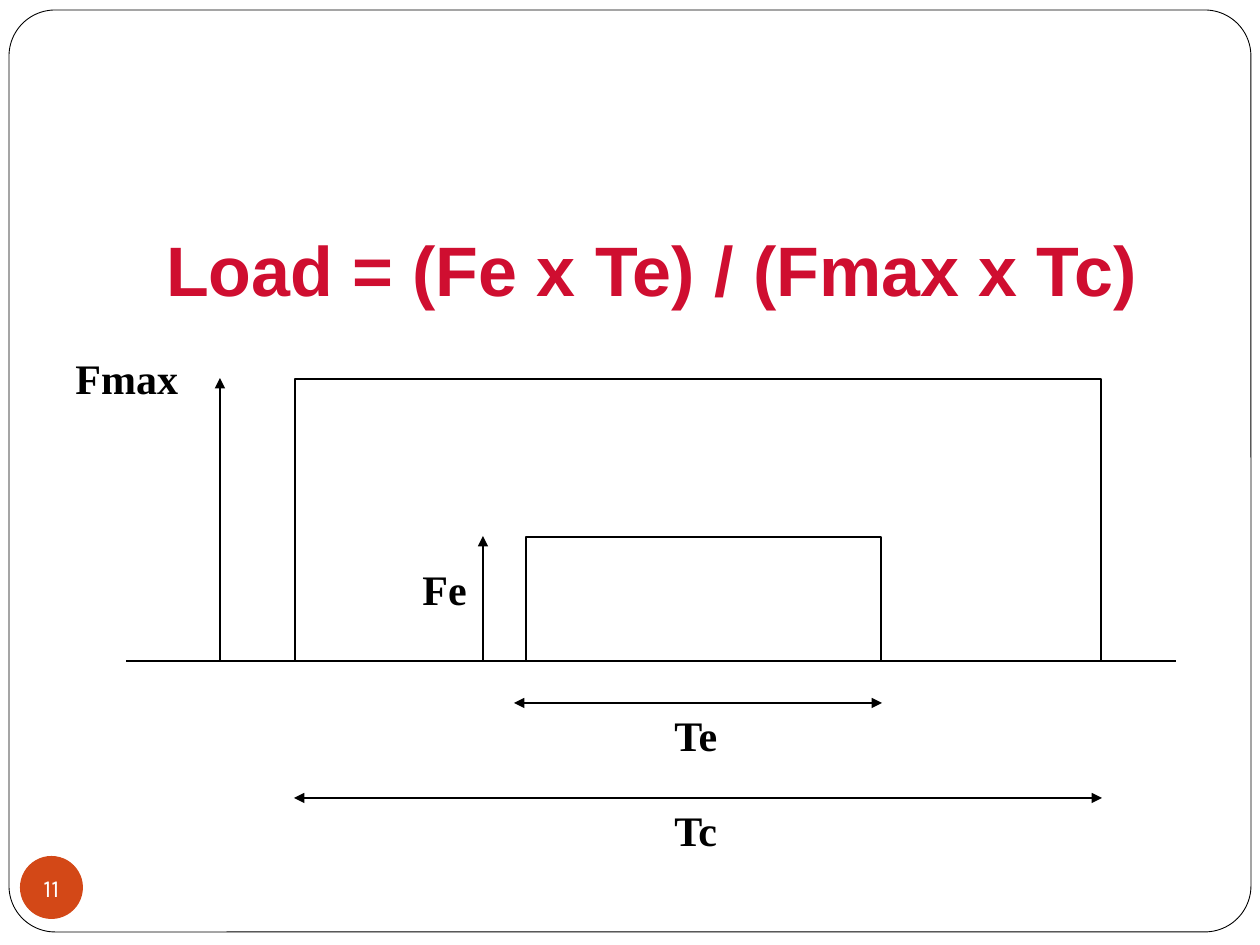
from lxml.etree import SubElement
from pptx import Presentation
from pptx.dml.color import RGBColor
from pptx.enum.shapes import MSO_CONNECTOR, MSO_SHAPE
from pptx.enum.text import MSO_ANCHOR, MSO_AUTO_SIZE, PP_ALIGN
from pptx.oxml.ns import qn
from pptx.util import Emu, Pt

PX_PER_INCH = 126
BASELINE = 661


def px(length):
    return Emu(round(length * 914400 / PX_PER_INCH))


def color(hex_string):
    return RGBColor.from_string(hex_string)


class LoadSlide:
    """Holds the style and the slide being drawn."""

    ink = "000000"
    paper = "FFFFFF"
    formula_red = "CF0E30"
    badge_orange = "D34817"

    def __init__(self, slide):
        self.slide = slide

    def shape(self, kind, left, top, width, height, fill=None, line=None):
        """Add a preset shape; line is a width in points."""
        shape = self.slide.shapes.add_shape(
            kind, px(left), px(top), px(width), px(height))
        shape.shadow.inherit = False
        if fill:
            shape.fill.solid()
            shape.fill.fore_color.rgb = color(fill)
        else:
            shape.fill.background()
        if line:
            shape.line.color.rgb = color(self.ink)
            shape.line.width = Pt(line)
        else:
            shape.line.fill.background()
        return shape

    def line(self, start, end, arrows=()):
        """Add a line; arrows names the ends that carry a triangle."""
        line = self.slide.shapes.add_connector(
            MSO_CONNECTOR.STRAIGHT, *map(px, start + end))
        line.line.color.rgb = color(self.ink)
        line.line.width = Pt(1)
        properties = line._element.spPr
        outline = properties.find(qn("a:ln"))
        for arrow in arrows:
            SubElement(outline, qn(f"a:{arrow}"), type="triangle")
        SubElement(properties, qn("a:effectLst"))

    def set_text(self, frame, text, font, size, hex_string, bold=True,
                 align=PP_ALIGN.LEFT):
        paragraph = frame.paragraphs[0]
        paragraph.text = text
        paragraph.alignment = align
        paragraph.font.name = font
        paragraph.font.size = Pt(size)
        paragraph.font.bold = bold
        paragraph.font.color.rgb = color(hex_string)

    def text_box(self, left, top, width, height):
        box = self.slide.shapes.add_textbox(
            px(left), px(top), px(width), px(height))
        box.text_frame.word_wrap = True
        return box.text_frame

    def title(self, text):
        frame = self.text_box(116, 189, 1071, 158)
        frame.vertical_anchor = MSO_ANCHOR.MIDDLE
        self.set_text(frame, text, "Arial", 40, self.formula_red,
                      align=PP_ALIGN.CENTER)

    def label(self, text, left, top, width):
        frame = self.text_box(left, top, width, 63)
        frame.auto_size = MSO_AUTO_SIZE.SHAPE_TO_FIT_TEXT
        self.set_text(frame, text, "Times New Roman", 24, self.ink)

    def page_number(self, text):
        badge = self.shape(MSO_SHAPE.OVAL, 20, 856, 63, 63, self.badge_orange)
        frame = badge.text_frame
        frame.margin_left = frame.margin_right = 0
        frame.margin_top = frame.margin_bottom = 0
        frame.word_wrap = False
        frame.vertical_anchor = MSO_ANCHOR.MIDDLE
        self.set_text(frame, text, "Karla", 14, self.paper, bold=False,
                      align=PP_ALIGN.CENTER)


def main():
    presentation = Presentation()
    presentation.slide_width = px(1260)
    presentation.slide_height = px(945)
    page = LoadSlide(presentation.slides.add_slide(presentation.slide_layouts[6]))

    border = page.shape(MSO_SHAPE.ROUNDED_RECTANGLE, 9, 10, 1242, 922,
                        page.paper, 0.5)
    border.adjustments[0] = 0.05
    page.title("Load = (Fe x Te) / (Fmax x Tc)")

    page.line((126, BASELINE), (1176, BASELINE))
    for left, top, width in ((295, 379, 806), (526, 537, 355)):
        page.shape(MSO_SHAPE.RECTANGLE, left, top, width, BASELINE - top, line=1)

    for x, top in ((220, 378), (483, 536)):
        page.line((x, top), (x, BASELINE), ("headEnd",))
    for left, right, y in ((294, 1102, 798), (514, 882, 703)):
        page.line((left, y), (right, y), ("headEnd", "tailEnd"))

    for text, left, top, width in (
        ("Fmax", 63, 346, 222),
        ("Fe", 410, 557, 96),
        ("Te", 662, 703, 96),
        ("Tc", 662, 798, 137),
    ):
        page.label(text, left, top, width)

    page.page_number("11")
    presentation.save("out.pptx")


if __name__ == "__main__":
    main()
